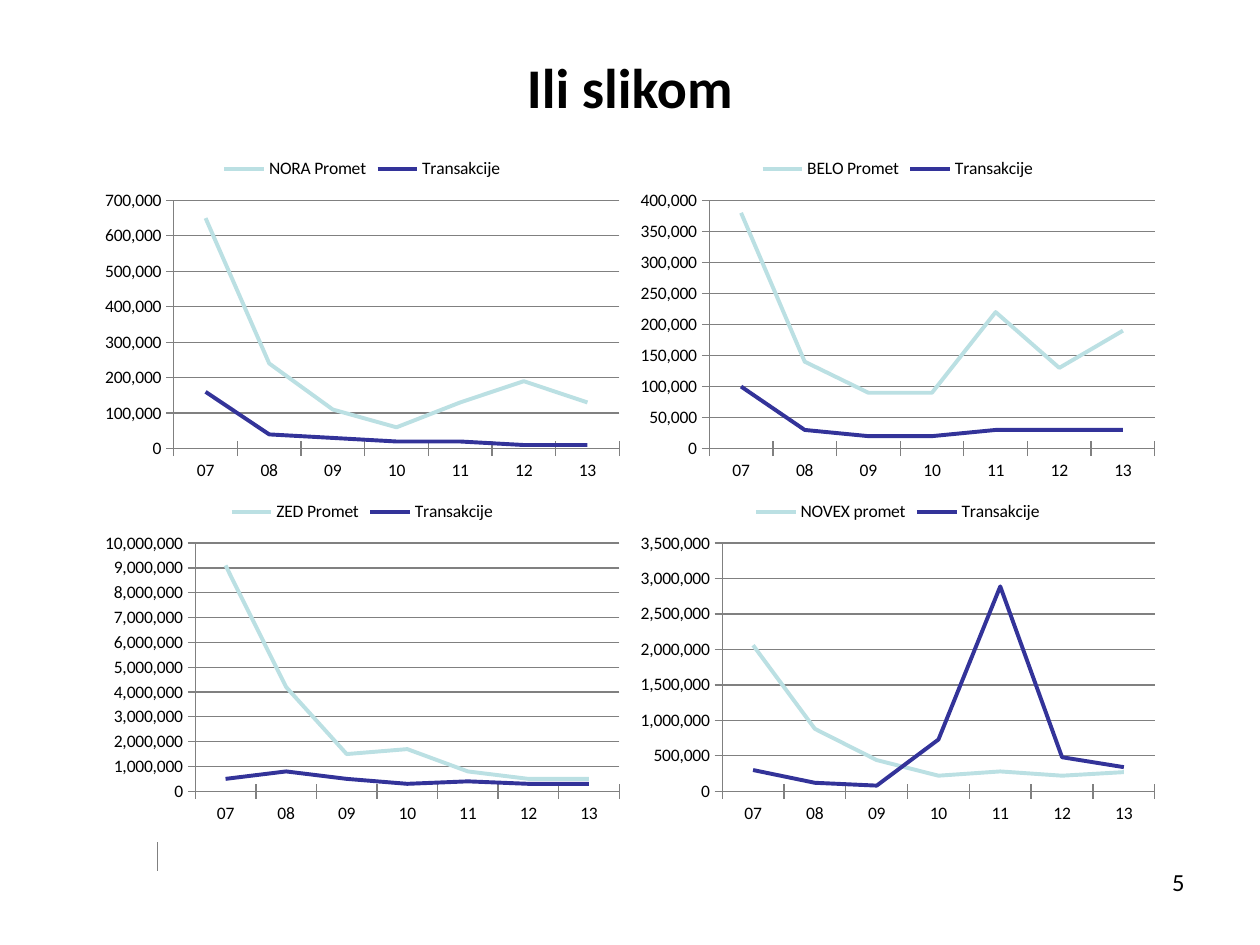
from lxml import etree
from pptx import Presentation
from pptx.chart.data import CategoryChartData
from pptx.dml.color import RGBColor
from pptx.enum import chart as ch, shapes, text
from pptx.oxml.ns import qn
from pptx.util import Pt

YEARS = ["07", "08", "09", "10", "11", "12", "13"]
TONES = ["BBE0E3", "333399"]
GREY = "808080"
LEFT, TOP, WIDE, HIGH = 54, 82.8, 306, 195.84

# Turnover and trades per market, in thousands
MARKETS = [
    ("NORA Promet", [650, 240, 110, 60, 130, 190, 130],
     [160, 40, 30, 20, 20, 10, 10]),
    ("BELO Promet", [380, 140, 90, 90, 220, 130, 190],
     [100, 30, 20, 20, 30, 30, 30]),
    ("ZED Promet", [9100, 4200, 1500, 1700, 800, 500, 500],
     [500, 800, 500, 300, 400, 300, 300]),
    ("NOVEX promet", [2060, 880, 440, 220, 280, 220, 270],
     [300, 120, 80, 730, 2890, 480, 340]),
]


def paint(color, tone):
    color.rgb = RGBColor.from_string(tone)


def style(font, size, bold=False):
    font.name, font.size, font.bold = "Calibri", Pt(size), bold
    paint(font.color, "000000")


def stroke(line, tone, width):
    paint(line.color, tone)
    line.width = Pt(width)


def place(shape, x, y, w, h):
    shape.left, shape.top, shape.width, shape.height = map(Pt, (x, y, w, h))


def add_title(slide, words):
    title = slide.shapes.title
    place(title, 36, 21.6, 648, 55.44)
    frame = title.text_frame
    frame.text = words
    frame.vertical_anchor = text.MSO_ANCHOR.MIDDLE
    par = frame.paragraphs[0]
    par.alignment = text.PP_ALIGN.CENTER
    style(par.font, 32, True)


def add_number(slide, words):
    box = slide.shapes.add_textbox(Pt(516), Pt(491.76), Pt(168), Pt(37.44))
    box.text_frame.word_wrap = True
    par = box.text_frame.paragraphs[0]
    par.text = words
    par.alignment = text.PP_ALIGN.RIGHT
    style(par.font, 14)


def add_rule(slide):
    rule = slide.shapes.add_connector(
        shapes.MSO_CONNECTOR.STRAIGHT, Pt(90), Pt(497.5), Pt(90), Pt(481))
    stroke(rule.line, GREY, 0.75)
    etree.SubElement(rule._element.spPr, qn("a:effectLst"))


def add_lines(slide, x, y, name, sales, trades):
    data = CategoryChartData(number_format="#,##0")
    data.categories = YEARS
    for label, vals in ((name, sales), ("Transakcije", trades)):
        data.add_series(label, [val * 1000 for val in vals])
    chart = slide.shapes.add_chart(
        ch.XL_CHART_TYPE.LINE, Pt(x), Pt(y), Pt(WIDE), Pt(HIGH), data).chart
    style(chart.font, 10)
    chart.has_title = False
    chart.has_legend = True
    chart.legend.position = ch.XL_LEGEND_POSITION.TOP
    chart.legend.include_in_layout = False
    for axis in (chart.category_axis, chart.value_axis):
        axis.major_tick_mark = ch.XL_TICK_MARK.CROSS
        stroke(axis.format.line, GREY, 0.75)
    chart.value_axis.has_major_gridlines = True
    stroke(chart.value_axis.major_gridlines.format.line, GREY, 0.75)
    chart.value_axis.tick_labels.number_format = "#,##0"
    chart.value_axis.tick_labels.number_format_is_linked = False
    plot = chart.plots[0]
    plot.vary_by_categories = False
    for series, tone in zip(plot.series, TONES):
        series.smooth = False
        series.marker.style = ch.XL_MARKER_STYLE.NONE
        stroke(series.format.line, tone, 2.25)


def main():
    deck = Presentation()
    deck.slide_width, deck.slide_height = Pt(720), Pt(540)
    slide = deck.slides.add_slide(deck.slide_layouts[5])
    add_rule(slide)
    add_title(slide, "Ili slikom")
    add_number(slide, "5")
    for i, market in enumerate(MARKETS):
        row, col = divmod(i, 2)
        add_lines(slide, LEFT + col * WIDE, TOP + row * HIGH, *market)
    deck.save("out.pptx")


if __name__ == "__main__":
    main()
